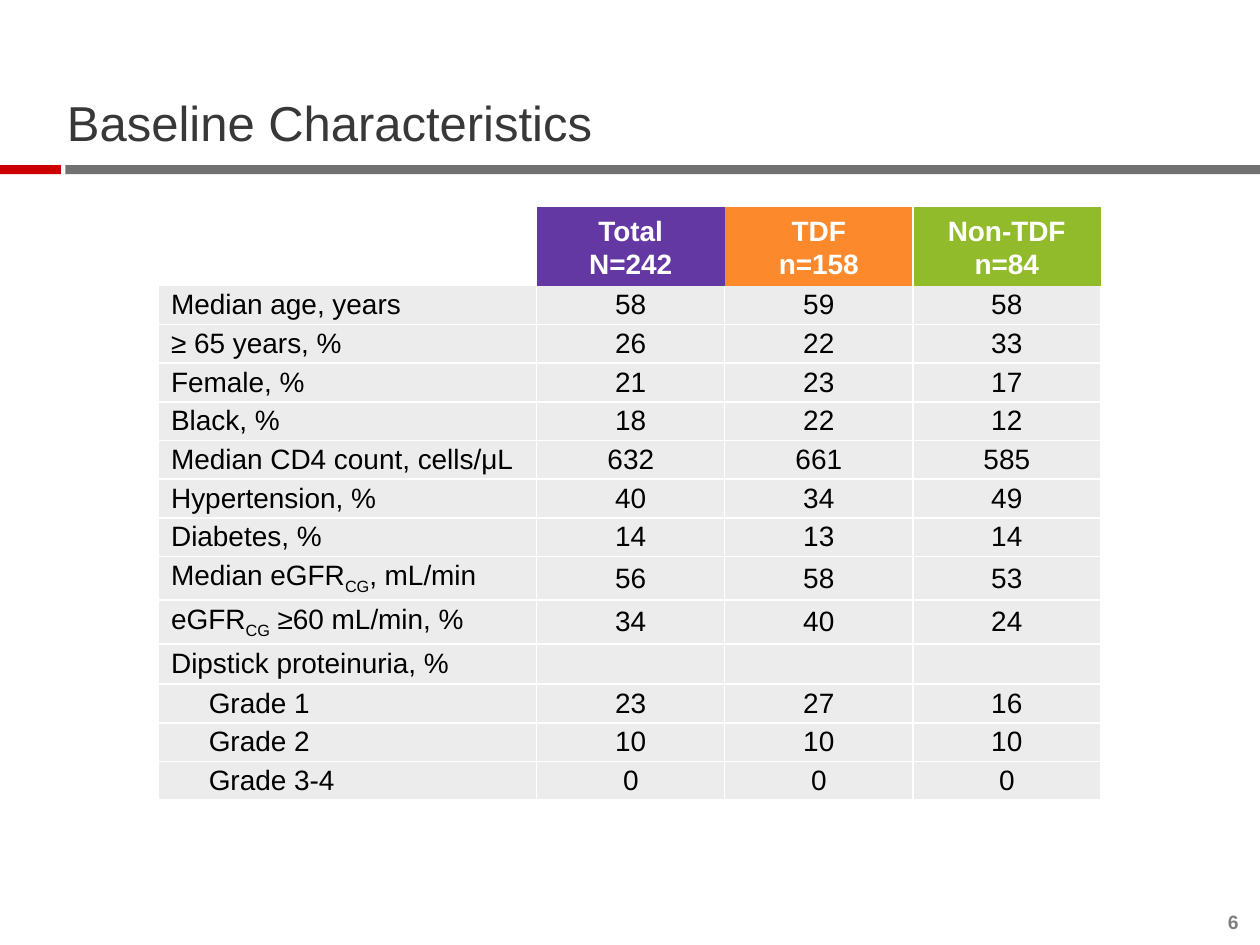
import pptx
import pptx.util
import pptx.dml.color
import pptx.enum.shapes
import pptx.enum.text
import pptx.oxml.ns
import lxml.etree

Cm = pptx.util.Cm
Pt = pptx.util.Pt
ALIGN = pptx.enum.text.PP_ALIGN
ANCHOR = pptx.enum.text.MSO_ANCHOR

TITLE = "Baseline Characteristics"
PAGE = "6"
GROUPS = [
    ("Total\nN=242", "6338A2"),
    ("TDF\nn=158", "FC8A2C"),
    ("Non-TDF\nn=84", "92BB2B"),
]
# SUBSCRIPTS_BETWEEN_BARS = "|"
ROWS = [
    ("Median age, years", 0, ("58", "59", "58")),
    ("≥ 65 years, %", 0, ("26", "22", "33")),
    ("Female, %", 0, ("21", "23", "17")),
    ("Black, %", 0, ("18", "22", "12")),
    ("Median CD4 count, cells/μL", 0, ("632", "661", "585")),
    ("Hypertension, %", 0, ("40", "34", "49")),
    ("Diabetes, %", 0, ("14", "13", "14")),
    ("Median eGFR|CG|, mL/min", 0, ("56", "58", "53")),
    ("eGFR|CG| ≥60 mL/min, %", 0, ("34", "40", "24")),
    ("Dipstick proteinuria, %", 0, ("", "", "")),
    ("Grade 1", 1, ("23", "27", "16")),
    ("Grade 2", 1, ("10", "10", "10")),
    ("Grade 3-4", 1, ("0", "0", "0")),
]
THEME = {
    "font": "Arial", "title": 28, "cell": 16, "page": 11,
    "ink": "000000", "heading": "383838", "muted": "7F7F7F",
    "white": "FFFFFF", "band": "ECECEC", "bar": "717171", "accent": "CC0000",
}


def rgb(value):
    return pptx.dml.color.RGBColor.from_string(value)


def write(tf, text, *, size, color, bold=False, align=ALIGN.LEFT, spacing=None):
    p = tf.paragraphs[0]
    p.alignment = align
    p.line_spacing = spacing
    for i, part in enumerate(text.split("|")):
        for j, line in enumerate(part.split("\n")):
            if j:
                p.add_line_break()
            if not line:
                continue
            r = p.add_run()
            r.text = line
            r.font.name = THEME["font"]
            r.font.size = Pt(size)
            r.font.bold = bold
            r.font.color.rgb = rgb(color)
            if i % 2:
                r._r.get_or_add_rPr().set("baseline", "-25000")
    if not text:
        end = lxml.etree.SubElement(p._p, pptx.oxml.ns.qn("a:endParaRPr"))
        end.set("sz", str(size * 100))


def set_frame(tf, anchor):
    tf.margin_left = tf.margin_right = tf.margin_top = tf.margin_bottom = 0
    tf.word_wrap = True
    tf.auto_size = pptx.enum.text.MSO_AUTO_SIZE.NONE
    tf.vertical_anchor = anchor


def add_bar(s, left, width, color):
    sp = s.shapes.add_shape(pptx.enum.shapes.MSO_SHAPE.RECTANGLE,
                            Cm(left), Cm(3.33), Cm(width), Cm(0.18))
    sp.shadow.inherit = False
    sp.fill.solid()
    sp.fill.fore_color.rgb = rgb(color)
    sp.line.fill.background()


def set_borders(cell, shown):
    qn = pptx.oxml.ns.qn
    tcPr = cell._tc.get_or_add_tcPr()
    for side in "LRTB":
        ln = lxml.etree.SubElement(tcPr, qn("a:ln" + side), w=str(Pt(1)))
        if side in shown:
            fill = lxml.etree.SubElement(ln, qn("a:solidFill"))
            lxml.etree.SubElement(fill, qn("a:srgbClr"), val=THEME["white"])
        else:
            lxml.etree.SubElement(ln, qn("a:noFill"))


def format_cell(cell, text, *, borders, fill=THEME["band"], left=0.13,
                pad=0.06, anchor=ANCHOR.MIDDLE, **fmt):
    set_borders(cell, borders)
    if fill:
        cell.fill.solid()
        cell.fill.fore_color.rgb = rgb(fill)
    else:
        cell.fill.background()
    cell.margin_left, cell.margin_right = Cm(left), Cm(0.13)
    cell.margin_top = cell.margin_bottom = Cm(pad)
    cell.vertical_anchor = anchor
    write(cell.text_frame, text, size=THEME["cell"], **fmt)


def add_characteristics(s):
    widths = [7.62] + [3.79] * len(GROUPS)
    heights = [1.59] + [0.88 if "|" in label else 0.78 for label, _, _ in ROWS]
    table = s.shapes.add_table(len(heights), len(widths), Cm(3.2), Cm(4.17),
                               Cm(sum(widths)), Cm(sum(heights))).table
    table.first_row = table.horz_banding = False
    for column, width in zip(table.columns, widths):
        column.width = Cm(width)
    for row, height in zip(table.rows, heights):
        row.height = Cm(height)

    format_cell(table.cell(0, 0), "", borders="", fill=None, color=THEME["ink"])
    for c, ((text, color), borders) in enumerate(zip(GROUPS, ("", "R", "L")), 1):
        format_cell(table.cell(0, c), text, borders=borders, fill=color, pad=0.1,
                    anchor=ANCHOR.BOTTOM, color=THEME["white"], bold=True,
                    align=ALIGN.CENTER, spacing=1.07)
    for n, (label, level, values) in enumerate(ROWS, 1):
        borders = "LRB" if n == 1 else "LRTB"
        format_cell(table.cell(n, 0), label, borders=borders,
                    left=0.25 + 0.76 * level, color=THEME["ink"])
        for c, value in enumerate(values, 1):
            format_cell(table.cell(n, c), value, borders=borders,
                        color=THEME["ink"], align=ALIGN.CENTER)


def main():
    prs = pptx.Presentation()
    prs.slide_width, prs.slide_height = Cm(25.4), Cm(19.05)
    s = prs.slides.add_slide(prs.slide_layouts[5])
    add_bar(s, 1.32, 24.08, THEME["bar"])
    add_bar(s, 0, 1.23, THEME["accent"])

    title = s.shapes.title
    title.left, title.top, title.width, title.height = Cm(1.35), Cm(1.19), Cm(22.86), Cm(1.88)
    set_frame(title.text_frame, ANCHOR.BOTTOM)
    write(title.text_frame, TITLE, size=THEME["title"], color=THEME["heading"], spacing=0.9)

    page = s.shapes.add_textbox(Cm(24.28), Cm(18.36), Cm(0.69), Cm(0.46))
    set_frame(page.text_frame, ANCHOR.BOTTOM)
    write(page.text_frame, PAGE, size=THEME["page"], color=THEME["muted"],
          bold=True, align=ALIGN.RIGHT)

    add_characteristics(s)
    prs.save("out.pptx")


if __name__ == "__main__":
    main()
